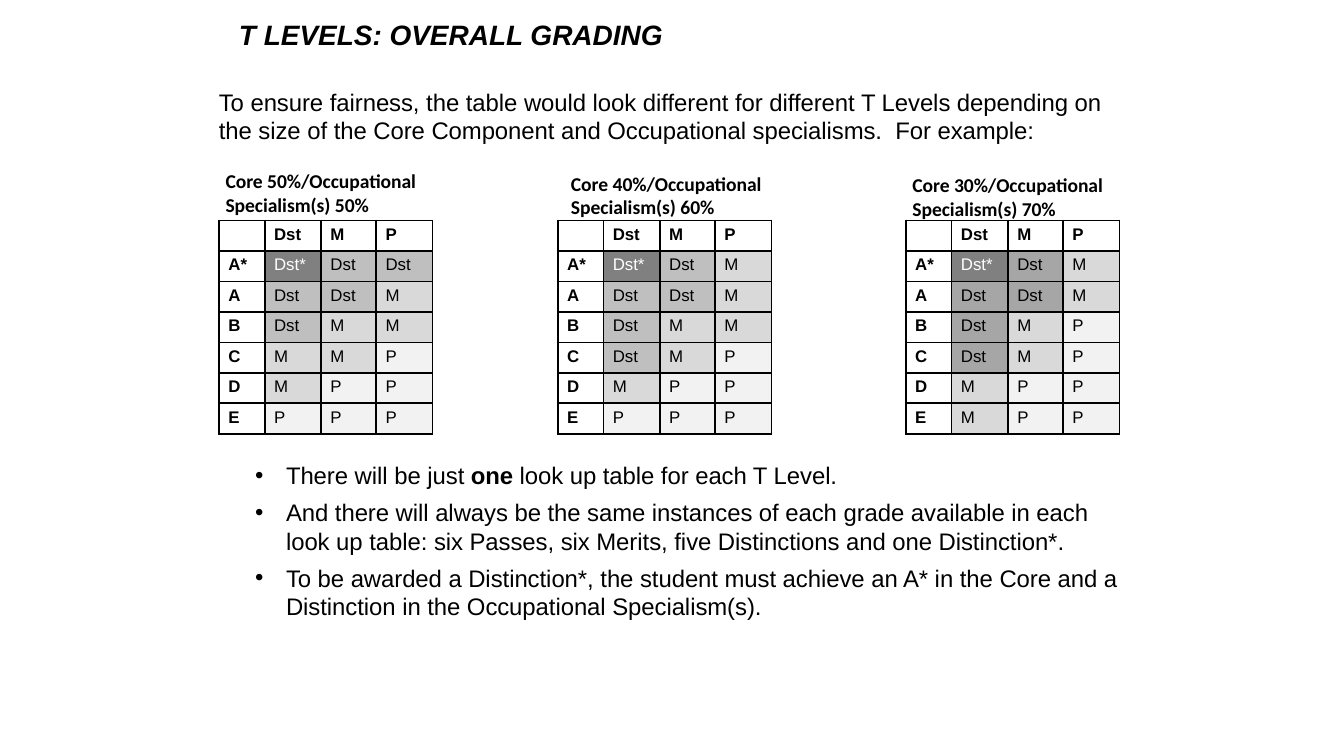
from lxml.etree import SubElement
from pptx import Presentation
from pptx.dml.color import RGBColor
from pptx.enum.text import MSO_ANCHOR as Anchor
from pptx.oxml.ns import qn
from pptx.util import Inches, Pt

COLORS = {
    "black": "000000",
    "white": "FFFFFF",
    "top": "808080",
    "distinction": "BFBFBF",
    "dark distinction": "A6A6A6",
    "merit": "D9D9D9",
    "pass": "F2F2F2",
}
CORE_GRADES = ["A*", "A", "B", "C", "D", "E"]
SPECIALISM_GRADES = ["Dst", "M", "P"]
COLUMN_WIDTHS = [0.34, 0.42, 0.41, 0.42]
TABLE_TOP, TABLE_SIZE = 1.64, 1.59

# Table left, caption box (left, top, width), core share, distinction fill, grades
LOOKUPS = [
    (1.63, (1.58, 1.21, 1.8), 50, "distinction",
     ["Dst* Dst Dst", "Dst Dst M", "Dst M M", "M M P", "M P P", "P P P"]),
    (4.15, (4.15, 1.23, 1.71), 40, "distinction",
     ["Dst* Dst M", "Dst Dst M", "Dst M M", "Dst M P", "M P P", "P P P"]),
    (6.74, (6.69, 1.24, 1.71), 30, "dark distinction",
     ["Dst* Dst M", "Dst Dst M", "Dst M P", "Dst M P", "M P P", "M P P"]),
]
BULLETS = [
    [("There will be just", False), (" one ", True),
     ("look up table for each T Level.", False)],
    [("And there will always be the same instances of each grade available in each "
      "look up table: six Passes, six Merits, five Distinctions and one Distinction*.",
      False)],
    [("To be awarded a Distinction*, the student must achieve an A* in the Core and a "
      "Distinction in the Occupational Specialism(s).", False)],
]


def rgb(name):
    return RGBColor.from_string(COLORS[name])


def add_span(para, text, size=12.75, font="Arial", color="black", bold=False, italic=False):
    span = para.add_run()
    span.text = text
    span.font.size = Pt(size)
    span.font.name = font
    span.font.color.rgb = rgb(color)
    span.font.bold = bold
    span.font.italic = italic


def add_frame(page, left, top, width, height):
    """Add a wrapping text box and return its text frame."""
    box = page.shapes.add_textbox(Inches(left), Inches(top), Inches(width), Inches(height))
    box.text_frame.word_wrap = True
    return box.text_frame


def set_borders(cell):
    props = cell._tc.get_or_add_tcPr()
    for index, side in enumerate(("lnL", "lnR", "lnT", "lnB")):
        line = SubElement(props, qn(f"a:{side}"), w=str(Pt(1)))
        fill = SubElement(line, qn("a:solidFill"))
        SubElement(fill, qn("a:srgbClr"), val=COLORS["black"])
        props.insert(index, line)


def fill_cell(cell, text, fill="white", **style):
    cell.margin_left = cell.margin_right = Inches(0.07)
    cell.margin_top = cell.margin_bottom = Pt(2.6)
    cell.fill.solid()
    cell.fill.fore_color.rgb = rgb(fill)
    set_borders(cell)
    para = cell.text_frame.paragraphs[0]
    if text:
        para.space_before = Pt(9)
        add_span(para, text, size=9, **style)
    else:
        SubElement(para._p, qn("a:endParaRPr"), sz="900")


def add_lookup_table(page, left, top, size, distinction, grades):
    rows = len(CORE_GRADES) + 1
    table = page.shapes.add_table(rows, len(COLUMN_WIDTHS), Inches(left), Inches(top),
                                  Inches(size), Inches(size)).table
    table.first_row = table.horz_banding = False
    for column, width in zip(table.columns, COLUMN_WIDTHS):
        column.width = Inches(width)
    for row in table.rows:
        row.height = Inches(size / rows)

    fills = {"Dst*": "top", "Dst": distinction, "M": "merit", "P": "pass"}
    for c, label in enumerate([""] + SPECIALISM_GRADES):
        fill_cell(table.cell(0, c), label, bold=True)
    for r, (core, line) in enumerate(zip(CORE_GRADES, grades), start=1):
        fill_cell(table.cell(r, 0), core, bold=True)
        for c, grade in enumerate(line.split(), start=1):
            color = "white" if grade == "Dst*" else "black"
            fill_cell(table.cell(r, c), grade, fills[grade], color=color)


def add_caption(page, left, top, width, core):
    frame = add_frame(page, left, top, width, 0.45)
    add_span(frame.paragraphs[0],
             f"Core {core}%/Occupational Specialism(s) {100 - core}%",
             size=10.5, font="Calibri", bold=True)


def add_title(page, left, top, width, height):
    frame = add_frame(page, left, top, width, height)
    frame.vertical_anchor = Anchor.MIDDLE
    para = frame.paragraphs[0]
    para.line_spacing = 0.8
    add_span(para, "T LEVELS: OVERALL GRADING", size=15, bold=True, italic=True)


def add_intro(page, left, top, width, height):
    frame = add_frame(page, left, top, width, height)
    add_span(frame.paragraphs[0],
             "To ensure fairness, the table would look different for different T Levels "
             "depending on the size of the Core Component and Occupational specialisms.  "
             "For example:")


def add_bullets(page, left, top, width, height):
    frame = add_frame(page, left, top, width, height)
    for index, spans in enumerate(BULLETS):
        para = frame.add_paragraph() if index else frame.paragraphs[0]
        para.space_after = Pt(4.5)
        props = para._p.get_or_add_pPr()
        props.set("marL", str(Inches(0.23)))
        props.set("indent", str(Inches(-0.23)))
        SubElement(props, qn("a:buFont"), typeface="Arial")
        SubElement(props, qn("a:buChar"), char="•")
        for text, bold in spans:
            add_span(para, text, bold=bold)


def main():
    deck = Presentation()
    deck.slide_width, deck.slide_height = Inches(10), Inches(10 * 9 / 16)
    page = deck.slides.add_slide(deck.slide_layouts[6])
    for left, caption_box, core, distinction, grades in LOOKUPS:
        add_lookup_table(page, left, TABLE_TOP, TABLE_SIZE, distinction, grades)
        add_caption(page, *caption_box, core)
    add_intro(page, 1.53, 0.6, 6.82, 0.53)
    add_bullets(page, 1.8, 3.38, 6.61, 1.31)
    add_title(page, 1.68, 0.14, 6.86, 0.28)
    deck.save("out.pptx")


if __name__ == "__main__":
    main()
